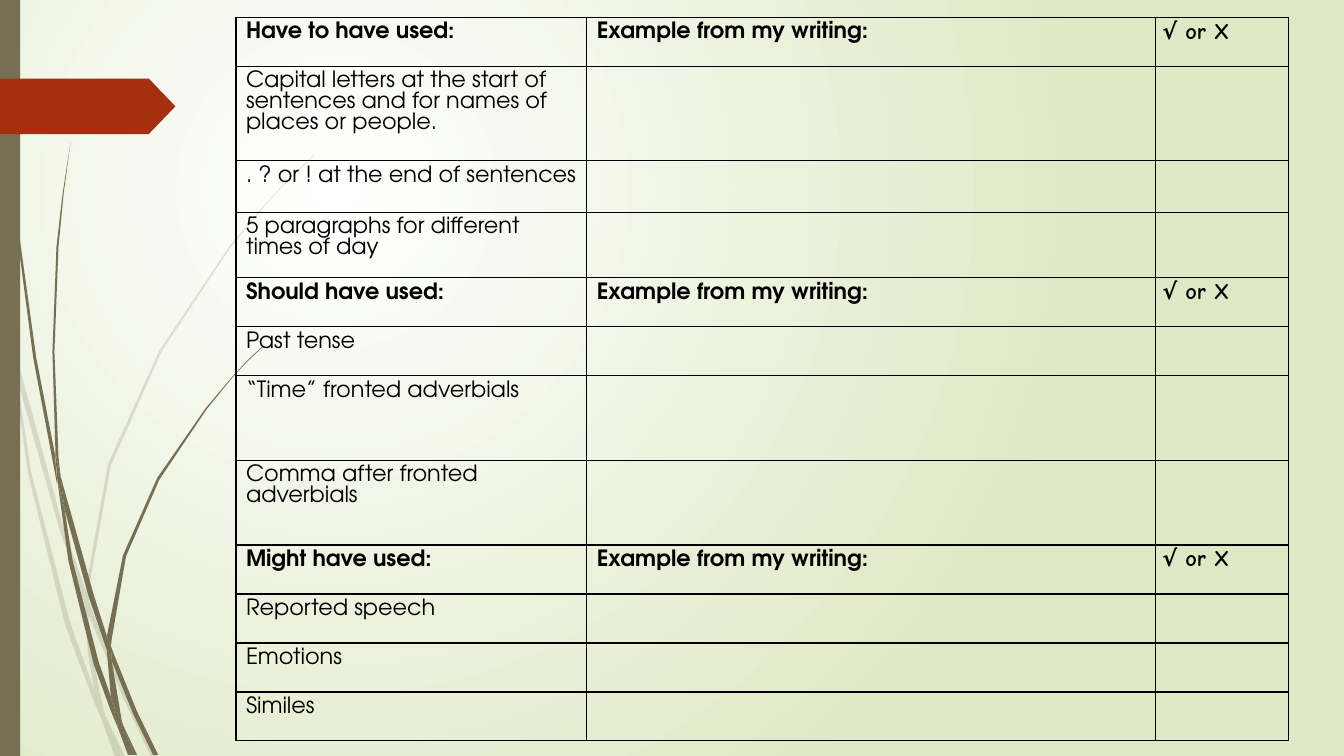
import pptx
import pptx.util
import pptx.dml.color
import pptx.enum.shapes
import pptx.oxml.ns
from lxml import etree

Inches = pptx.util.Inches
Pt = pptx.util.Pt
RGBColor = pptx.dml.color.RGBColor
qn = pptx.oxml.ns.qn

WHITE = RGBColor(0xFF, 0xFF, 0xFF)
PALE_GREEN = RGBColor(0xDF, 0xE8, 0xC4)
OLIVE = RGBColor(0x76, 0x6F, 0x54)
RUST = RGBColor(0xA5, 0x30, 0x10)
BLACK = RGBColor(0, 0, 0)

BODY_FONT = "TeX Gyre Adventor"
MARK_FONT = "Comic Neue"

PALE_GRASS = [
    [(0.11, 3.5), (0.09, 3.22), (0, 2.82), (0, 2.99), (0.1, 3.44)],
    [(0.58, 5.22), (0.84, 5.99), (0.85, 5.86), (0.62, 5.2), (0.14, 3.45), (0.17, 3.76)],
    [(0.92, 6.07), (0.88, 5.96), (0.88, 6.1), (1.23, 6.94), (1.5, 7.51), (1.55, 7.51),
     (1.27, 6.92)],
    [(1.19, 7.51), (1.24, 7.51), (1.05, 7.11)],
    [(0.93, 6.83), (0.7, 6.19), (0.31, 4.69), (0.17, 3.76), (0.11, 3.5), (0.28, 4.7),
     (0.65, 6.21), (0.92, 6.93), (1.01, 7.14), (0.99, 7.07)],
    [(0.84, 5.99), (0.87, 6.46), (0.93, 6.83), (0.96, 6.92), (1.05, 7.11), (1.03, 7.06),
     (0.91, 6.46), (0.88, 6.1), (0.88, 6.08)],
    [(0.88, 5.84), (1.1, 4.62), (1.6, 3.49), (2.29, 2.45), (2.68, 1.98), (2.9, 1.75),
     (3.12, 1.54), (3.12, 1.53), (2.89, 1.75), (2.68, 1.97), (2.28, 2.44), (1.58, 3.48),
     (1.07, 4.61), (0.85, 5.84), (0.85, 5.86), (0.88, 5.96)],
    [(1.01, 7.14), (1.14, 7.51), (1.19, 7.51)],
    [(0.88, 6.08), (0.88, 6.1), (0.88, 5.96), (0.85, 5.86), (0.84, 5.99)],
    [(0.96, 6.92), (0.93, 6.83), (0.99, 7.07), (1.01, 7.14), (1.19, 7.51), (1.05, 7.11)],
]
DARK_GRASS = [
    [(0.07, 1.1), (0.17, 2.33), (0.33, 3.55), (0.56, 4.77), (0.57, 4.81), (0.55, 4.57),
     (0.55, 4.53), (0.36, 3.55), (0.19, 2.32), (0.08, 1.09), (0.05, 0.48), (0.04, 0),
     (0.03, 0), (0.04, 0.48)],
    [(0.88, 5.92), (1.06, 6.45), (1.06, 6.33), (1.06, 6.31), (0.93, 5.9), (0.6, 4.72),
     (0.64, 5.05)],
    [(1.13, 6.49), (1.1, 6.41), (1.11, 6.56), (1.32, 7.08), (1.52, 7.49), (1.57, 7.49),
     (1.36, 7.06)],
    [(1.1, 6.91), (0.98, 6.57), (0.72, 5.56), (0.64, 5.05), (0.57, 4.77), (0.68, 5.57),
     (0.93, 6.59), (1.11, 7.08), (1.17, 7.22), (1.16, 7.17)],
    [(0.6, 4.72), (0.58, 4.53), (0.54, 3.49), (0.58, 2.45), (0.63, 1.93), (0.7, 1.41),
     (0.62, 1.93), (0.56, 2.45), (0.52, 3.49), (0.55, 4.49)],
    [(1.33, 7.49), (1.36, 7.49), (1.22, 7.19)],
    [(0.57, 4.77), (0.64, 5.05), (0.6, 4.72), (0.55, 4.49), (0.55, 4.53)],
    [(1.11, 6.33), (1.25, 5.52), (1.58, 4.76), (2.05, 4.06), (2.31, 3.74), (2.45, 3.59),
     (2.61, 3.44), (2.6, 3.44), (2.45, 3.58), (2.31, 3.73), (2.04, 4.05), (1.56, 4.74),
     (1.22, 5.51), (1.06, 6.31), (1.1, 6.41)],
    [(1.17, 7.22), (1.27, 7.49), (1.31, 7.49)],
    [(1.06, 6.45), (1.1, 6.91), (1.16, 7.06), (1.22, 7.19), (1.21, 7.16), (1.11, 6.56),
     (1.09, 6.51)],
    [(1.06, 6.45), (1.09, 6.51), (1.11, 6.56), (1.1, 6.41), (1.06, 6.31), (1.06, 6.33)],
    [(1.16, 7.06), (1.1, 6.91), (1.16, 7.17), (1.17, 7.22), (1.3, 7.49), (1.33, 7.49),
     (1.22, 7.19)],
]

SHORT_ROW = Pt(35)
TALL_ROW = Inches(0.84)
SECTIONS = [
    ("Have to have used:", [
        ("Capital letters at the start of sentences and for names of places or people.",
         Inches(0.94)),
        (". ? or ! at the end of sentences", Inches(0.51)),
        ("5 paragraphs for different times of day", Inches(0.65))]),
    ("Should have used:", [
        ("Past tense", SHORT_ROW),
        ("“Time” fronted adverbials", TALL_ROW),
        ("Comma after fronted adverbials", TALL_ROW)]),
    ("Might have used:", [
        ("Reported speech", SHORT_ROW),
        ("Emotions", SHORT_ROW),
        ("Similes", SHORT_ROW)]),
]
COLUMN_WIDTHS = [3.48, 5.64, 1.32]


def paint(shape, color, opacity=100):
    shape.shadow.inherit = False
    shape.fill.solid()
    shape.fill.fore_color.rgb = color
    shape.line.fill.background()
    if opacity < 100:
        color_element = shape.element.spPr.find(qn("a:solidFill"))[0]
        etree.SubElement(color_element, qn("a:alpha"), val=str(opacity * 1000))


def add_grass(slide, left, top, pieces, opacity):
    group = slide.shapes.add_group_shape()
    for piece in pieces:
        outline = [(Inches(left + x), Inches(top + y)) for x, y in piece]
        builder = group.shapes.build_freeform(*outline[0])
        builder.add_line_segments(outline[1:])
        paint(builder.convert_to_shape(), OLIVE, opacity)


def add_side_decoration(slide, left, top, height):
    shape_type = pptx.enum.shapes.MSO_SHAPE
    add_grass(slide, left, top, PALE_GRASS, 20)
    add_grass(slide, left, top, DARK_GRASS, 100)
    bar = slide.shapes.add_shape(
        shape_type.RECTANGLE, Inches(left), Inches(top), Inches(0.2), Inches(height))
    paint(bar, OLIVE)
    arrow = slide.shapes.add_shape(
        shape_type.PENTAGON, Inches(left), Inches(top + 0.78), Inches(1.74), Inches(0.55))
    arrow.adjustments[0] = 0.48
    paint(arrow, RUST)


def set_background(slide):
    fill = slide.background.fill
    fill.gradient()
    for stop, color in zip(fill.gradient_stops, (WHITE, PALE_GREEN)):
        stop.color.rgb = color
    gradient = slide.element.find(".//" + qn("a:gradFill"))
    gradient.remove(gradient.find(qn("a:lin")))
    circle = etree.SubElement(gradient, qn("a:path"), attrib={"path": "circle"})
    etree.SubElement(circle, qn("a:fillToRect"), l="50000", t="50000", r="100000", b="100000")


def style_cell(cell):
    properties = cell._tc.get_or_add_tcPr()
    for side in ("lnL", "lnR", "lnT", "lnB"):
        border = etree.SubElement(properties, qn("a:" + side), w=str(Pt(1)))
        solid = etree.SubElement(border, qn("a:solidFill"))
        etree.SubElement(solid, qn("a:srgbClr"), val=str(BLACK))
    cell.fill.background()


def write_cell(cell, text, bold=False, font=BODY_FONT):
    run = cell.text_frame.paragraphs[0].add_run()
    run.text = text
    run.font.name = font
    run.font.size = Pt(16)
    run.font.bold = bold
    run.font.color.rgb = BLACK


def write_mark_heading(cell):
    cell.margin_left = cell.margin_right = Inches(0.07)
    cell.margin_top = cell.margin_bottom = 0
    paragraph = cell.text_frame.paragraphs[0]
    paragraph.line_spacing = 1.07
    paragraph.space_after = Pt(8)
    write_cell(cell, "√ or X", True, MARK_FONT)


def add_checklist(slide, left, top, width, height):
    rows = []
    for heading, items in SECTIONS:
        rows.append((heading, SHORT_ROW, True))
        rows += [(item, item_height, False) for item, item_height in items]
    table = slide.shapes.add_table(
        len(rows), len(COLUMN_WIDTHS),
        Inches(left), Inches(top), Inches(width), Inches(height)).table
    table.first_row = table.horz_banding = False
    for column, column_width in zip(table.columns, COLUMN_WIDTHS):
        column.width = Inches(column_width)
    for row, (text, row_height, is_heading) in zip(table.rows, rows):
        row.height = row_height
        for cell in row.cells:
            style_cell(cell)
        write_cell(row.cells[0], text, is_heading)
        if is_heading:
            write_cell(row.cells[1], "Example from my writing:", True)
            write_mark_heading(row.cells[2])


def main():
    presentation = pptx.Presentation()
    presentation.slide_width = Inches(13.33)
    presentation.slide_height = Inches(7.5)
    slide = presentation.slides.add_slide(presentation.slide_layouts[6])
    set_background(slide)
    add_side_decoration(slide, 0, 0, 7.5)
    add_checklist(slide, 2.34, 0.17, 10.44, 7.17)
    presentation.save("out.pptx")


if __name__ == "__main__":
    main()
